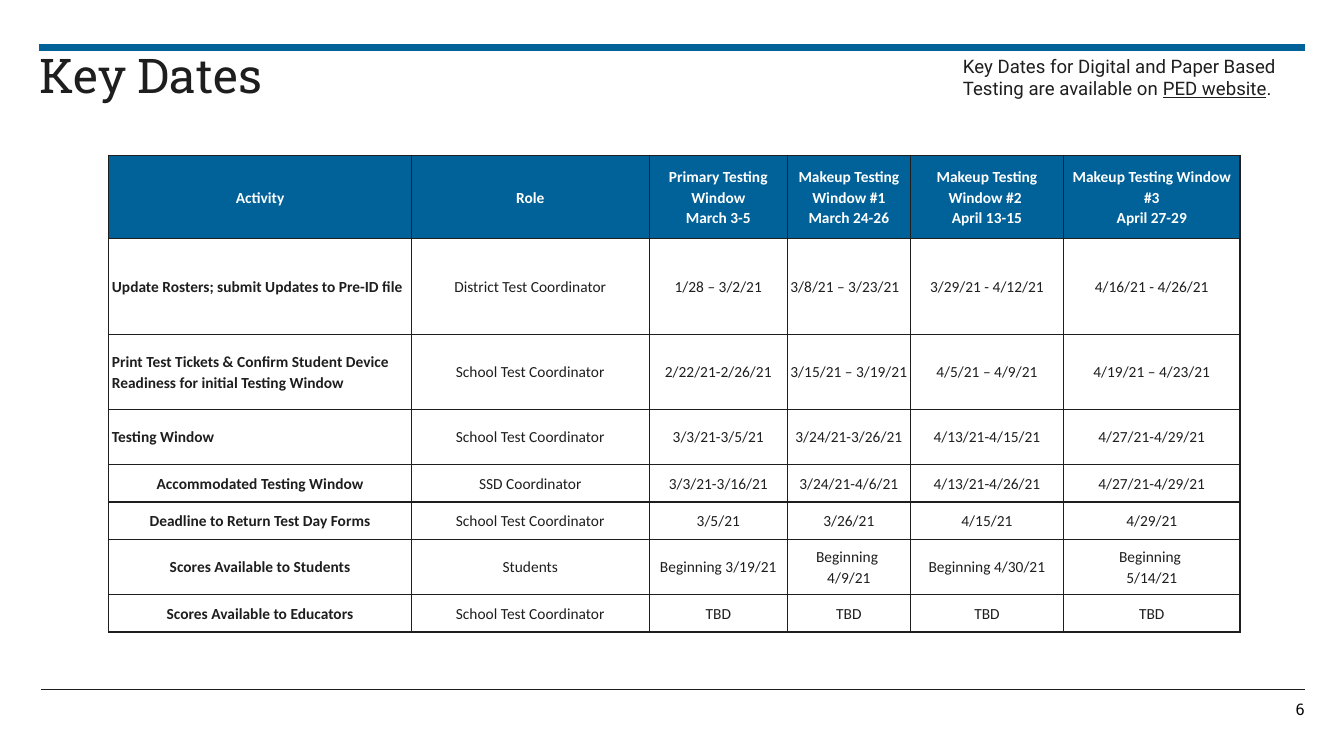
import copy
from dataclasses import dataclass

import lxml.etree
import pptx
import pptx.dml.color
import pptx.enum.shapes
import pptx.enum.text
import pptx.oxml.ns
import pptx.util

Inches = pptx.util.Inches
Align = pptx.enum.text.PP_ALIGN
Anchor = pptx.enum.text.MSO_ANCHOR
qn = pptx.oxml.ns.qn


@dataclass(frozen=True)
class Theme:
    blue: str = "006298"
    ink: str = "1E1E1E"
    white: str = "FFFFFF"
    number: str = "080808"
    title_font: str = "Roboto Slab"
    note_font: str = "Roboto"
    table_font: str = "Calibri"
    title_size: float = 34.2
    note_size: float = 13.3
    number_size: float = 11.4
    table_size: float = 11
    border_width: float = 1
    table_spacing: float = 1.07


COLUMN_WIDTHS = [3, 2.36, 1.37, 1.22, 1.52, 1.75]
ROW_HEIGHTS = [0.83, 0.95, 0.74, 0.55, 0.37, 0.37, 0.55, 0.37]

# "\n" starts a new paragraph, "\v" breaks the line within one.
KEY_DATES = [
    ["Activity", "Role", "Primary Testing Window\nMarch 3-5",
     "Makeup Testing Window #1\nMarch 24-26",
     "Makeup Testing Window #2 \vApril 13-15",
     "Makeup Testing Window #3\nApril 27-29"],
    ["Update Rosters; submit Updates to Pre-ID file", "District Test Coordinator",
     "1/28 – 3/2/21", "3/8/21 – 3/23/21", "3/29/21 - 4/12/21", "4/16/21 - 4/26/21"],
    ["Print Test Tickets & Confirm Student Device Readiness for initial Testing Window",
     "School Test Coordinator",
     "2/22/21-2/26/21", "3/15/21 – 3/19/21", "4/5/21 – 4/9/21", "4/19/21 – 4/23/21"],
    ["Testing Window", "School Test Coordinator",
     "3/3/21-3/5/21", "3/24/21-3/26/21", "4/13/21-4/15/21", "4/27/21-4/29/21"],
    ["Accommodated Testing Window", "SSD Coordinator",
     "3/3/21-3/16/21", "3/24/21-4/6/21", "4/13/21-4/26/21", "4/27/21-4/29/21"],
    ["Deadline to Return Test Day Forms", "School Test Coordinator",
     "3/5/21", "3/26/21", "4/15/21", "4/29/21"],
    ["Scores Available to Students", "Students", "Beginning 3/19/21",
     "Beginning \v4/9/21", "Beginning 4/30/21", "Beginning \v5/14/21"],
    ["Scores Available to Educators", "School Test Coordinator",
     "TBD", "TBD", "TBD", "TBD"],
]
LEFT_ALIGNED = {(1, 0), (2, 0), (3, 0), (1, 3)}


def set_all(target, values):
    for name, value in values.items():
        setattr(target, name, value)


def rgb(color):
    return pptx.dml.color.RGBColor.from_string(color)


class SlideBuilder:
    def __init__(self, slide, theme):
        self.slide = slide
        self.theme = theme

    def style_font(self, font, family, size, color, **extra):
        set_all(font, {"name": family, "size": pptx.util.Pt(size), **extra})
        font.color.rgb = rgb(color)

    def line(self, left, top, right, color, width):
        rule = self.slide.shapes.add_connector(
            pptx.enum.shapes.MSO_CONNECTOR.STRAIGHT,
            Inches(left), Inches(top), Inches(right), Inches(top))
        rule.line.color.rgb = rgb(color)
        rule.line.width = pptx.util.Pt(width)
        lxml.etree.SubElement(rule._element.spPr, qn("a:effectLst"))

    def text(self, place, spans, style, margins=(0, 0, 0, 0), align=Align.LEFT,
             **frame_format):
        """Add a one-paragraph box; spans are (words, font values) pairs."""
        box = self.slide.shapes.add_textbox(*map(Inches, place))
        sides = ("margin_left", "margin_top", "margin_right", "margin_bottom")
        set_all(box.text_frame, {"word_wrap": True,
                                 **dict(zip(sides, map(Inches, margins))),
                                 **frame_format})
        para = box.text_frame.paragraphs[0]
        para.alignment = align
        for words, extra in spans:
            span = para.add_run()
            span.text = words
            self.style_font(span.font, *style, **extra)

    def border(self, cell):
        properties = cell._tc.get_or_add_tcPr()
        for index, side in enumerate(("lnL", "lnR", "lnT", "lnB")):
            edge = lxml.etree.Element(
                qn("a:" + side), w=str(pptx.util.Pt(self.theme.border_width)))
            fill = lxml.etree.SubElement(edge, qn("a:solidFill"))
            lxml.etree.SubElement(fill, qn("a:srgbClr"), val=self.theme.ink)
            properties.insert(index, edge)

    def cell(self, cell, words, align, header, bold):
        theme = self.theme
        margin = Inches(0.06 if header else 0.03)
        set_all(cell, {"margin_left": margin, "margin_right": margin,
                       "margin_top": 0, "margin_bottom": 0,
                       "vertical_anchor": Anchor.MIDDLE})
        if header:
            cell.fill.solid()
            cell.fill.fore_color.rgb = rgb(theme.blue)
        else:
            cell.fill.background()
        self.border(cell)
        cell.text_frame.text = words
        for para in cell.text_frame.paragraphs:
            set_all(para, {"alignment": align, "line_spacing": theme.table_spacing})
            for span in para.runs:
                self.style_font(span.font, theme.table_font, theme.table_size,
                                theme.white if header else theme.ink, bold=bold)
            for line_break in para._p.findall(qn("a:br")):
                line_break.append(copy.deepcopy(para.runs[0]._r.rPr))

    def table(self, left, top, widths, heights, rows):
        table = self.slide.shapes.add_table(
            len(rows), len(widths), Inches(left), Inches(top),
            Inches(sum(widths)), Inches(sum(heights))).table
        set_all(table, {"first_row": False, "horz_banding": False})
        for column, width in zip(table.columns, widths):
            column.width = Inches(width)
        for row, height in zip(table.rows, heights):
            row.height = Inches(height)
        for r, row in enumerate(rows):
            for c, words in enumerate(row):
                align = Align.LEFT if (r, c) in LEFT_ALIGNED else Align.CENTER
                self.cell(table.cell(r, c), words, align,
                          header=r == 0, bold=r == 0 or c == 0)


def main():
    deck = pptx.Presentation()
    set_all(deck, {"slide_width": Inches(13.33), "slide_height": Inches(7.5)})
    theme = Theme()
    page = SlideBuilder(deck.slides.add_slide(deck.slide_layouts[6]), theme)

    page.text((12.43, 6.96, 0.51, 0.16), [("6", {})],
              (theme.title_font, theme.number_size, theme.number),
              align=Align.RIGHT, vertical_anchor=Anchor.MIDDLE, word_wrap=False)
    page.line(0.39, 0.47, 12.94, theme.blue, 5.25)
    page.line(0.41, 6.84, 12.94, theme.ink, 0.25)
    page.text((0.39, 0.45, 12.34, 0.45), [("Key Dates", {})],
              (theme.title_font, theme.title_size, theme.ink),
              margins=(0, 0, 0.08, 0))
    page.table(1.08, 1.54, COLUMN_WIDTHS, ROW_HEIGHTS, KEY_DATES)
    page.text((9.51, 0.5, 3.25, 0.52),
              [("Key Dates for Digital and Paper Based Testing are available on ", {}),
               ("PED website", {"underline": True}), (".", {})],
              (theme.note_font, theme.note_size, theme.ink),
              margins=(0.04, 0.04, 0.04, 0.04),
              auto_size=pptx.enum.text.MSO_AUTO_SIZE.SHAPE_TO_FIT_TEXT)
    deck.save("out.pptx")


if __name__ == "__main__":
    main()
